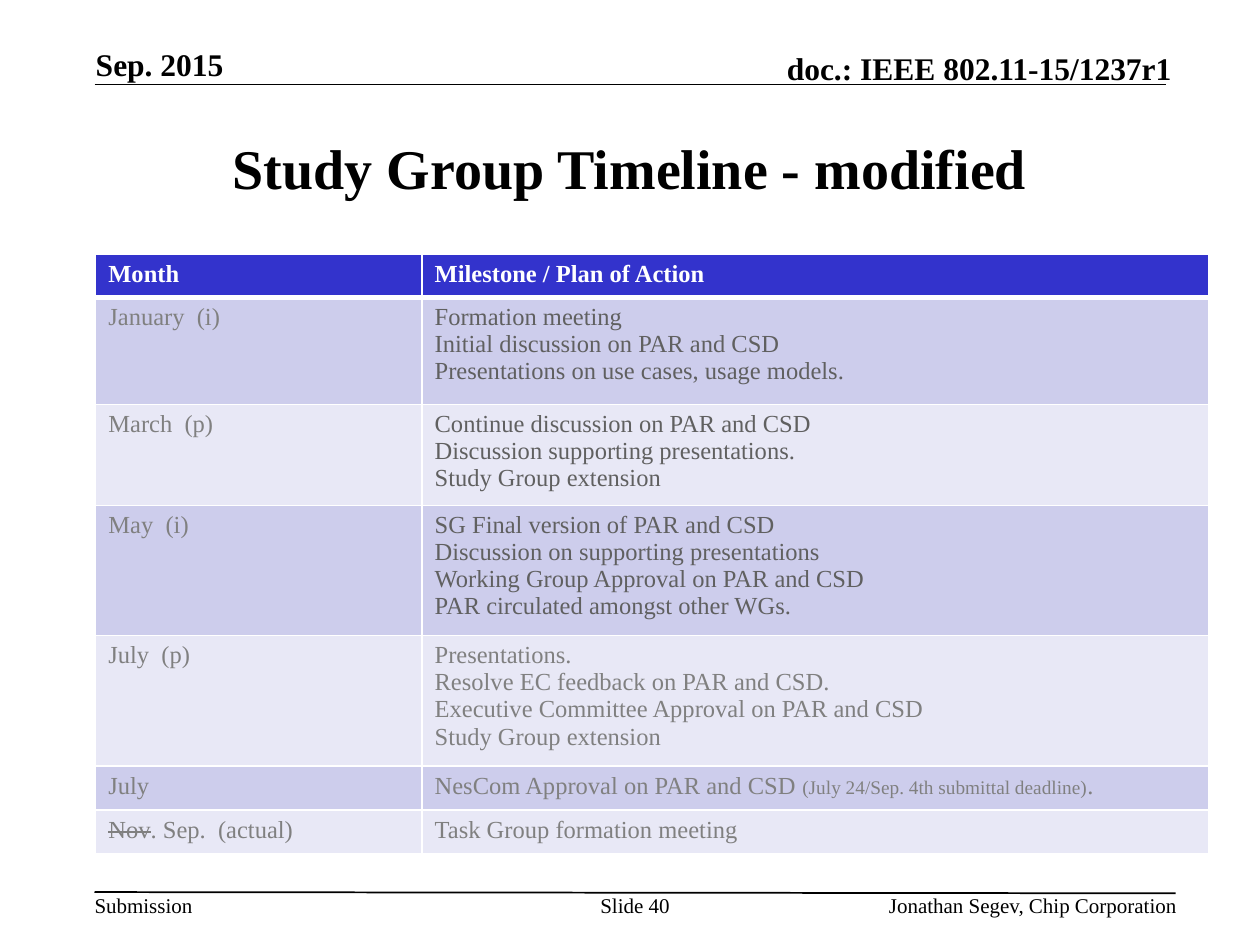
"""Build the study group timeline slide."""
from dataclasses import dataclass

from lxml.etree import SubElement
from pptx import Presentation
from pptx.dml.color import RGBColor
from pptx.enum.shapes import MSO_CONNECTOR
from pptx.enum.text import MSO_ANCHOR, PP_ALIGN
from pptx.oxml.ns import qn
from pptx.util import Inches, Pt


@dataclass(frozen=True)
class Theme:
    font: str = "Times New Roman"
    black: str = "000000"
    white: str = "FFFFFF"
    header: str = "3333CC"
    bands: tuple = ("CDCDEC", "E8E8F6")
    gray: str = "808080"
    dark_gray: str = "606060"
    title: int = 32
    running_head: int = 18
    body: int = 14
    footer: int = 12
    small: int = 11
    rule: float = 1
    heavy_rule: float = 3


THEME = Theme()
COLUMNS = (2.59, 6.24)
HEIGHTS = (0.34, 0.85, 0.77, 1, 1, 0.35, 0.35)
HEADINGS = ("Month", "Milestone / Plan of Action")
TIMELINE = (
    ("January  (i)", THEME.dark_gray, (
        "Formation meeting",
        "Initial discussion on PAR and CSD",
        "Presentations on use cases, usage models.")),
    ("March  (p)", THEME.dark_gray, (
        "Continue discussion on PAR and CSD",
        "Discussion supporting presentations.",
        "Study Group extension")),
    ("May  (i)", THEME.dark_gray, (
        "SG Final version of PAR and CSD",
        "Discussion on supporting presentations",
        "Working Group Approval on PAR and CSD",
        "PAR circulated amongst other WGs.")),
    ("July  (p)", THEME.gray, (
        "Presentations.",
        "Resolve EC feedback on PAR and CSD.",
        "Executive Committee Approval on PAR and CSD",
        "Study Group extension")),
    ("July", THEME.gray, ((
        ("NesCom Approval on PAR and CSD ", {}),
        ("(July 24/Sep. 4th submittal deadline)", {"size": THEME.small}),
        (".", {})),)),
    ((("Nov", {"strike": True}), (". Sep.  (actual)", {})), THEME.gray,
     ("Task Group formation meeting",)),
)


def add_run(p, text, size=THEME.body, color=THEME.black, bold=False, strike=False):
    r = p.add_run()
    r.text = text
    r.font.name = THEME.font
    r.font.size = Pt(size)
    r.font.bold = bold
    r.font.color.rgb = RGBColor.from_string(color)
    if strike:
        r.font._element.set("strike", "sngStrike")


class SlideBuilder:
    def __init__(self, slide, theme):
        self.s = slide
        self.theme = theme

    def text(self, text, x, y, w, h, align=PP_ALIGN.LEFT, anchor=MSO_ANCHOR.TOP,
             wrap=True, **fmt):
        sp = self.s.shapes.add_textbox(Inches(x), Inches(y), Inches(w), Inches(h))
        tf = sp.text_frame
        tf.word_wrap = wrap
        tf.vertical_anchor = anchor
        tf.margin_left = tf.margin_right = tf.margin_top = tf.margin_bottom = 0
        p = tf.paragraphs[0]
        p.alignment = align
        add_run(p, text, **fmt)

    def line(self, x1, y1, x2, y2):
        cxn = self.s.shapes.add_connector(
            MSO_CONNECTOR.STRAIGHT, Inches(x1), Inches(y1), Inches(x2), Inches(y2))
        cxn.line.color.rgb = RGBColor.from_string(self.theme.black)
        cxn.line.width = Pt(self.theme.rule)
        SubElement(cxn._element.spPr, qn("a:effectLst"))

    def borders(self, cell, row):
        tc_pr = cell._tc.get_or_add_tcPr()
        heavy = {0: "lnB", 1: "lnT"}.get(row)
        for side in ("lnL", "lnR", "lnT", "lnB"):
            width = self.theme.heavy_rule if side == heavy else self.theme.rule
            ln = SubElement(tc_pr, qn(f"a:{side}"), w=str(Pt(width)))
            fill = SubElement(ln, qn("a:solidFill"))
            SubElement(fill, qn("a:srgbClr"), val=self.theme.white)

    def cell(self, cell, row, lines, fill, **fmt):
        self.borders(cell, row)
        cell.fill.solid()
        cell.fill.fore_color.rgb = RGBColor.from_string(fill)
        tf = cell.text_frame
        for i, line in enumerate(lines):
            p = tf.add_paragraph() if i else tf.paragraphs[0]
            runs = ((line, {}),) if isinstance(line, str) else line
            for text, extra in runs:
                add_run(p, text, **{**fmt, **extra})

    def table(self, x, y, widths, heights, headings, rows):
        t = self.theme
        tbl = self.s.shapes.add_table(
            len(heights), len(widths), Inches(x), Inches(y),
            Inches(sum(widths)), Inches(sum(heights))).table
        for column, width in zip(tbl.columns, widths):
            column.width = Inches(width)
        for row, height in zip(tbl.rows, heights):
            row.height = Inches(height)
        for col, heading in enumerate(headings):
            self.cell(tbl.cell(0, col), 0, (heading,), t.header, color=t.white, bold=True)
        for row, (month, color, milestones) in enumerate(rows, 1):
            band = t.bands[(row - 1) % 2]
            self.cell(tbl.cell(row, 0), row, (month,), band, color=t.gray)
            self.cell(tbl.cell(row, 1), row, milestones, band, color=color)


def main():
    prs = Presentation()
    prs.slide_width, prs.slide_height = Inches(10), Inches(7.5)
    b = SlideBuilder(prs.slides.add_slide(prs.slide_layouts[6]), THEME)
    head = {"size": THEME.running_head, "bold": True, "anchor": MSO_ANCHOR.BOTTOM}
    foot = {"size": THEME.footer}

    b.line(0.75, 0.67, 9.25, 0.67)
    b.line(0.75, 7.08, 9.33, 7.09)
    b.text("Sep. 2015", 0.76, 0.36, 2.05, 0.3, **head)
    b.text("doc.: IEEE 802.11-15/1237r1", 5.47, 0.39, 3.83, 0.3,
           align=PP_ALIGN.RIGHT, **head)
    b.text("Study Group Timeline - modified", 0.75, 0.75, 8.5, 1.16,
           align=PP_ALIGN.CENTER, anchor=MSO_ANCHOR.MIDDLE, size=THEME.title, bold=True)
    b.table(0.76, 2.02, COLUMNS, HEIGHTS, HEADINGS, TIMELINE)
    b.text("Submission", 0.75, 7.08, 0.78, 0.2, wrap=False, **foot)
    b.text("Slide 40", 4.75, 7.08, 0.58, 0.4, align=PP_ALIGN.CENTER, **foot)
    b.text("Jonathan Segev, Chip Corporation", 5.86, 7.08, 3.48, 0.2,
           align=PP_ALIGN.RIGHT, **foot)
    prs.save("out.pptx")


if __name__ == "__main__":
    main()
